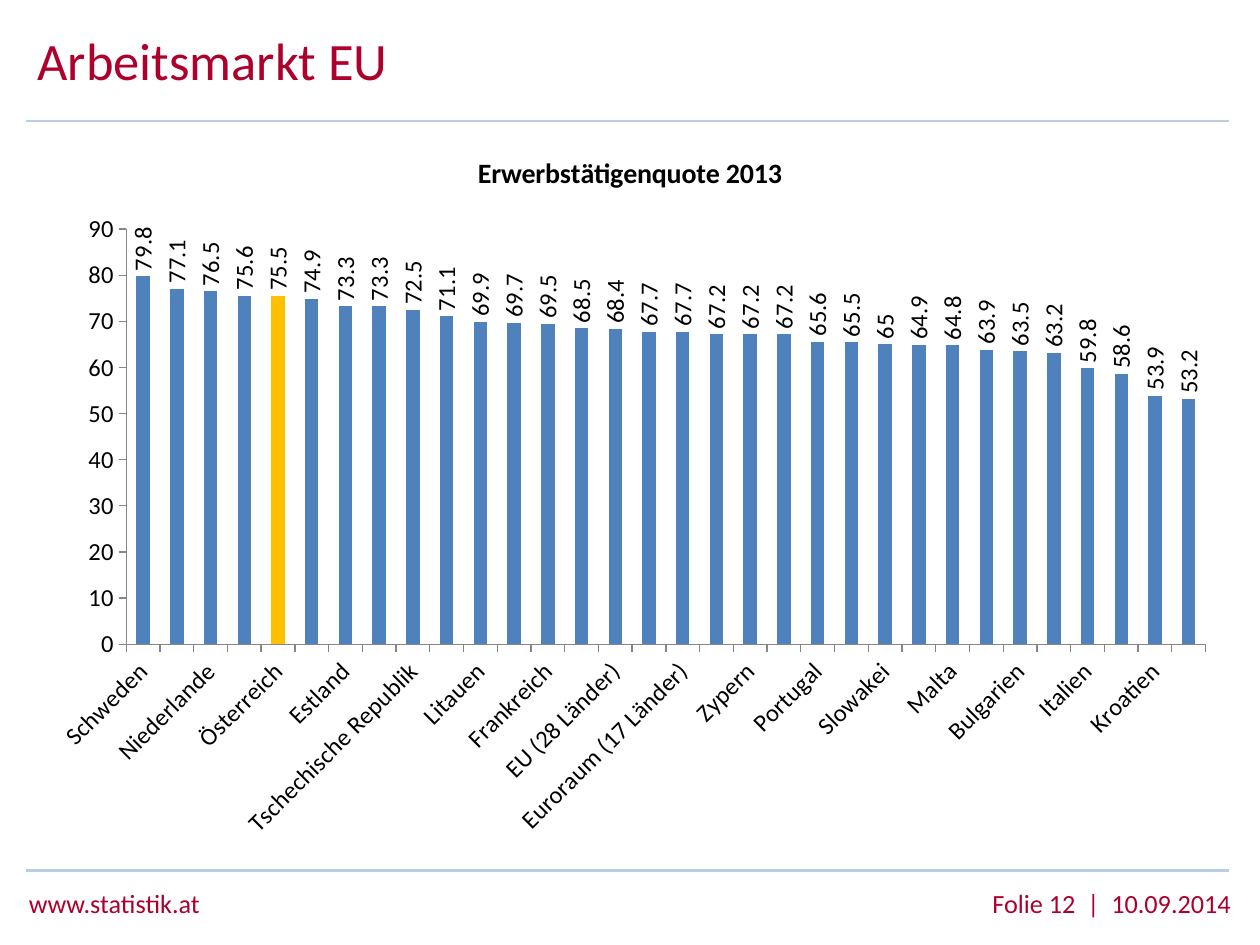
"""Build the slide on employment rates in the EU labour market, 2013."""
from lxml import etree
from pptx import Presentation
from pptx.chart.data import CategoryChartData
from pptx.dml.color import RGBColor
from pptx.enum.chart import XL_CHART_TYPE as ChartType, XL_LABEL_POSITION as LabelPos
from pptx.enum.chart import XL_TICK_MARK as TickMark
from pptx.enum.shapes import MSO_CONNECTOR as Connector
from pptx.enum.text import MSO_ANCHOR as Anchor, MSO_AUTO_SIZE as AutoSize, PP_ALIGN as Align
from pptx.oxml.ns import qn
from pptx.util import Pt

CRIMSON = RGBColor(0xAE, 0x00, 0x2C)
PALE_BLUE = RGBColor(0xB9, 0xCD, 0xE5)
BLUE = RGBColor(0x4F, 0x81, 0xBD)
AMBER = RGBColor(0xFF, 0xC0, 0x00)
GREY = RGBColor(0x86, 0x86, 0x86)
BLACK = RGBColor(0, 0, 0)
FONT = "Calibri"
HIGHLIGHT = "Österreich"
RATES = {
    "Schweden": 79.8, "Deutschland": 77.1, "Niederlande": 76.5, "Dänemark": 75.6,
    "Österreich": 75.5, "Vereinigtes Königreich": 74.9, "Estland": 73.3, "Finnland": 73.3,
    "Tschechische Republik": 72.5, "Luxemburg": 71.1, "Litauen": 69.9, "Lettland": 69.7,
    "Frankreich": 69.5, "EU (27 Länder)": 68.5, "EU (28 Länder)": 68.4,
    "Euroraum (18 Länder)": 67.7, "Euroraum (17 Länder)": 67.7, "Belgien": 67.2,
    "Zypern": 67.2, "Slowenien": 67.2, "Portugal": 65.6, "Irland": 65.5, "Slowakei": 65,
    "Polen": 64.9, "Malta": 64.8, "Rumänien": 63.9, "Bulgarien": 63.5, "Ungarn": 63.2,
    "Italien": 59.8, "Spanien": 58.6, "Kroatien": 53.9, "Griechenland": 53.2,
}


def apply_format(target, values):
    """Set each named attribute on the target."""
    for name, value in values.items():
        setattr(target, name, value)


presentation = Presentation()
apply_format(presentation, {"slide_width": Pt(720), "slide_height": Pt(540)})
slide = presentation.slides.add_slide(presentation.slide_layouts[6])

for text, box, size, paragraph_format in (
    ("www.statistik.at", (9.4, 503.3, 163.4, 25.2), 15, {}),
    ("Folie 12  |  10.09.2014", (450, 503.3, 260.6, 25.2), 15, {"alignment": Align.RIGHT}),
    ("Arbeitsmarkt EU", (14.4, 18, 549.4, 38.2), 30, {"line_spacing": Pt(30)}),
):
    frame = slide.shapes.add_textbox(*map(Pt, box)).text_frame
    apply_format(frame, {"text": text, "word_wrap": True, "vertical_anchor": Anchor.MIDDLE,
                         "auto_size": AutoSize.SHAPE_TO_FIT_TEXT})
    paragraph = frame.paragraphs[0]
    apply_format(paragraph, paragraph_format)
    apply_format(paragraph.runs[0].font, {"name": FONT, "size": Pt(size)})
    paragraph.runs[0].font.color.rgb = CRIMSON

for rule_y in (69.1, 497.5):
    rule = slide.shapes.add_connector(
        Connector.STRAIGHT, Pt(15.1), Pt(rule_y), Pt(702), Pt(rule_y))
    rule.line.width = Pt(1.5)
    rule.line.color.rgb = PALE_BLUE
    etree.SubElement(rule.element.spPr, qn("a:effectLst"))

rate_data = CategoryChartData()
rate_data.categories = list(RATES)
rate_data.add_series("Erwerbstätigenquote 2013", list(RATES.values()))
chart = slide.shapes.add_chart(
    ChartType.COLUMN_CLUSTERED, Pt(17.3), Pt(72.7), Pt(685.4), Pt(416.2), rate_data).chart
apply_format(chart, {"has_legend": False, "has_title": True})
apply_format(chart.font, {"name": FONT, "size": Pt(14)})
chart.font.color.rgb = BLACK

chart.chart_title.include_in_layout = False
heading = chart.chart_title.text_frame
heading.text = "Erwerbstätigenquote 2013"
heading_font = heading.paragraphs[0].runs[0].font
apply_format(heading_font, {"name": FONT, "size": Pt(16), "bold": True})
heading_font.color.rgb = BLACK

countries, percent = chart.category_axis, chart.value_axis
for axis in (countries, percent):
    apply_format(axis, {"has_major_gridlines": False, "major_tick_mark": TickMark.OUTSIDE,
                        "minor_tick_mark": TickMark.NONE})
    axis.format.line.color.rgb = GREY
    axis.format.line.width = Pt(0.75)
    axis.tick_labels.font.size = Pt(14)
apply_format(percent, {"minimum_scale": 0, "maximum_scale": 90, "major_unit": 10})

columns = chart.plots[0]
apply_format(columns, {"gap_width": 150, "vary_by_categories": False, "has_data_labels": True})
apply_format(columns.data_labels, {"show_value": True, "position": LabelPos.OUTSIDE_END})
columns.data_labels.font.size = Pt(14)
rates = columns.series[0]
highlighted = rates.points[list(RATES).index(HIGHLIGHT)]
for bar, color in ((rates, BLUE), (highlighted, AMBER)):
    bar.format.fill.solid()
    bar.format.fill.fore_color.rgb = color

labels_xml = columns.data_labels.font._element if hasattr(columns.data_labels.font, "_element") else None
for holder, angle in ((columns.data_labels._element, -90), (countries._element, -45)):
    body = holder.find(qn("c:txPr")).find(qn("a:bodyPr"))
    body.set("rot", str(angle * 60000))
    body.set("vert", "horz")

label_skip = etree.Element(qn("c:tickLblSkip"), val="2")
countries._element.find(qn("c:noMultiLvlLbl")).addprevious(label_skip)

plot_area = columns._element.getparent()
for old_layout in plot_area.findall(qn("c:layout")):
    plot_area.remove(old_layout)
layout = etree.Element(qn("c:layout"))
plot_area.insert(0, layout)
manual = etree.SubElement(layout, qn("c:manualLayout"))
for tag, value in (("layoutTarget", "inner"), ("xMode", "edge"), ("yMode", "edge"),
                   ("x", "0.08"), ("y", "0.14"), ("w", "0.9"), ("h", "0.57")):
    etree.SubElement(manual, qn(f"c:{tag}"), val=value)

presentation.save("out.pptx")
